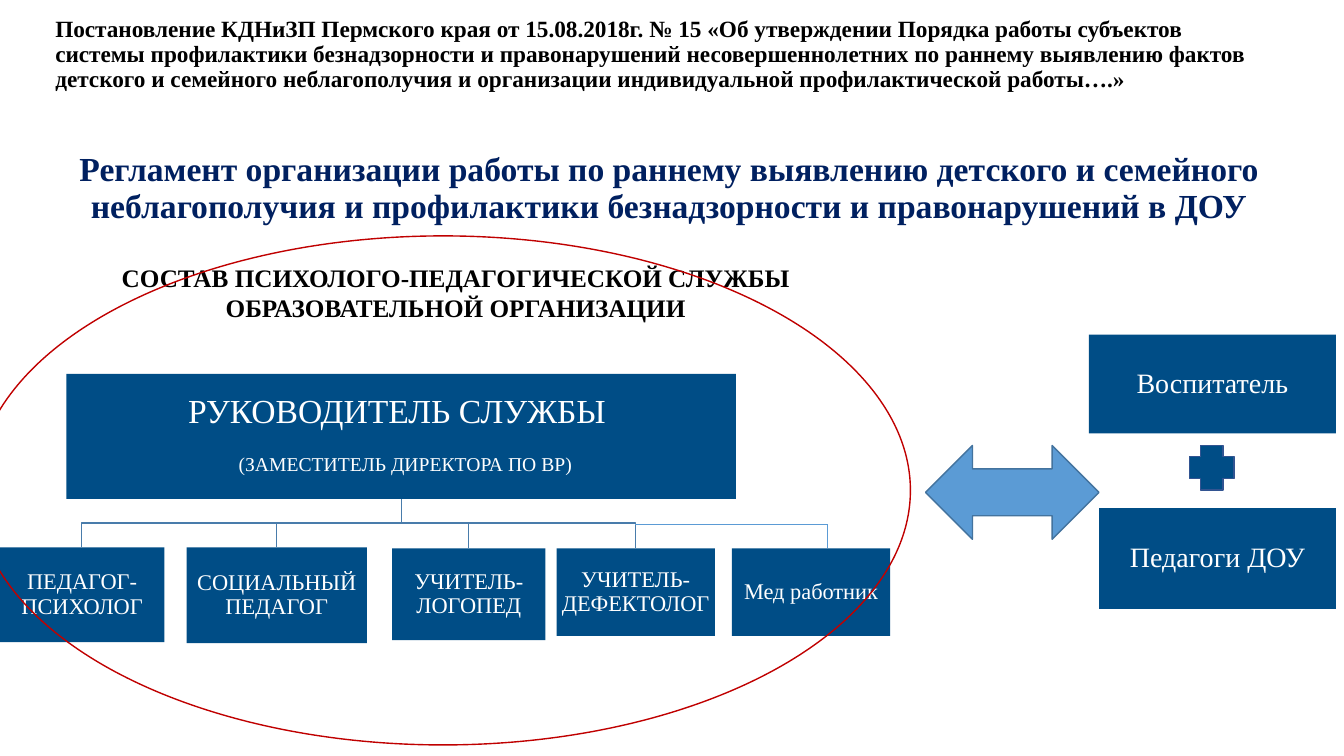
"""Slide on the psychological and pedagogical service of a kindergarten."""
from dataclasses import dataclass

from lxml.etree import SubElement
from pptx import Presentation
from pptx.dml.color import RGBColor
from pptx.enum.shapes import MSO_CONNECTOR, MSO_SHAPE as Shp
from pptx.enum.text import MSO_ANCHOR as Anchor, MSO_AUTO_SIZE as AutoSize, PP_ALIGN as Align
from pptx.oxml.ns import qn
from pptx.util import Emu, Pt

FONT = "Times New Roman"
NAVY, WHITE, BLACK, TITLE = "004D86", "FFFFFF", "000000", "002060"
TREE_LINE, BLUE, RED = "497CAB", "5B9BD5", "C00000"


@dataclass
class Run:
    text: str
    size: float
    color: str = WHITE
    bold: bool = False


@dataclass
class Box:
    left: int
    top: int
    width: int
    height: int
    paragraphs: list[list[Run]]
    inset: int = 1

    @property
    def center(self) -> int:
        return self.left + self.width // 2

    @property
    def bottom(self) -> int:
        return self.top + self.height


HEAD = Box(66, 371, 664, 124, [
    [Run("РУКОВОДИТЕЛЬ СЛУЖБЫ ", 24)],
    [Run(" ", 24), Run("(ЗАМЕСТИТЕЛЬ ДИРЕКТОРА ПО ВР)", 14)],
], 2)
STAFF = [
    Box(0, 543, 163, 94, [[Run("ПЕДАГОГ-ПСИХОЛОГ", 16)]]),
    Box(185, 543, 179, 95, [[Run("СОЦИАЛЬНЫЙ ПЕДАГОГ", 16)]]),
    Box(389, 544, 152, 91, [[Run("УЧИТЕЛЬ-ЛОГОПЕД", 16)]]),
    Box(552, 544, 157, 87, [[Run("УЧИТЕЛЬ-ДЕФЕКТОЛОГ", 16)]]),
]
MEDIC = Box(726, 544, 157, 87, [[Run("Мед работник", 16)]])
TEACHERS = [
    Box(1080, 332, 245, 98, [[Run("Воспитатель", 20)]]),
    Box(1090, 504, 235, 100, [[Run("Педагоги ДОУ", 20)]]),
]


def px(n: int) -> Emu:
    return Emu(n * 9144)


def rgb(color: str) -> RGBColor:
    return RGBColor.from_string(color)


def write(tf, paragraphs: list[list[Run]], align=Align.CENTER, anchor=Anchor.MIDDLE,
          spacing: float = 0.9, after: float = 0.0) -> None:
    tf.word_wrap = True
    tf.auto_size = AutoSize.NONE
    tf.vertical_anchor = anchor
    for i, runs in enumerate(paragraphs):
        p = tf.add_paragraph() if i else tf.paragraphs[0]
        p.alignment = align
        p.line_spacing = spacing
        p.space_before = Pt(0)
        p.space_after = Pt(after * runs[0].size)
        for run in runs:
            r = p.add_run()
            r.text = run.text
            r.font.name = FONT
            r.font.size = Pt(run.size)
            r.font.bold = run.bold
            r.font.color.rgb = rgb(run.color)


def style(sp, fill: str | None, line: str | None) -> None:
    sp.shadow.inherit = False
    if fill:
        sp.fill.solid()
        sp.fill.fore_color.rgb = rgb(fill)
    else:
        sp.fill.background()
    if line:
        sp.line.color.rgb = rgb(line)
        sp.line.width = Pt(1)
    else:
        sp.line.fill.background()


def add_preset(s, kind, left: int, top: int, width: int, height: int,
               fill: str | None, line: str | None = None):
    sp = s.shapes.add_shape(kind, px(left), px(top), px(width), px(height))
    style(sp, fill, line)
    return sp


def add_box(s, box: Box) -> None:
    sp = add_preset(s, Shp.RECTANGLE, box.left, box.top, box.width, box.height, NAVY)
    tf = sp.text_frame
    tf.margin_left = tf.margin_right = tf.margin_top = tf.margin_bottom = px(box.inset)
    write(tf, box.paragraphs, after=0.35)


def add_branch(s, head: Box, member: Box) -> None:
    middle = (head.bottom + member.top) // 2
    builder = s.shapes.build_freeform(head.center, head.bottom, scale=float(px(1)))
    builder.add_line_segments(
        [(head.center, middle), (member.center, middle), (member.center, member.top)],
        close=False)
    style(builder.convert_to_shape(), None, TREE_LINE)


def add_line(s, x1: int, y1: int, x2: int, y2: int) -> None:
    line = s.shapes.add_connector(MSO_CONNECTOR.STRAIGHT, px(x1), px(y1), px(x2), px(y2))
    line.line.color.rgb = rgb(BLUE)
    line.line.width = Pt(0.5)
    SubElement(line._element.spPr, qn("a:effectLst"))


def add_text(s, left: int, top: int, width: int, height: int, run: Run,
             align, spacing: float) -> None:
    tb = s.shapes.add_textbox(px(left), px(top), px(width), px(height))
    write(tb.text_frame, [[run]], align, Anchor.TOP, spacing)


def main() -> None:
    prs = Presentation()
    prs.slide_width, prs.slide_height = px(1333), px(750)
    s = prs.slides.add_slide(prs.slide_layouts[5])

    title = s.shapes.title
    title.left, title.top, title.width, title.height = px(45), px(141), px(1237), px(93)
    write(title.text_frame, [[Run(
        "Регламент организации работы по раннему выявлению детского и семейного "
        "неблагополучия и профилактики безнадзорности и правонарушений в ДОУ",
        24, TITLE, True)]])
    add_text(s, 45, 12, 1202, 121, Run(
        "Постановление КДНиЗП Пермского края от 15.08.2018г. № 15 «Об утверждении "
        "Порядка работы субъектов системы профилактики безнадзорности и правонарушений "
        "несовершеннолетних по раннему выявлению фактов детского и семейного "
        "неблагополучия и организации индивидуальной профилактической работы….»",
        16.6, BLACK, True), Align.LEFT, 0.9)

    for member in STAFF:
        add_branch(s, HEAD, member)
    for box in [HEAD, *STAFF, MEDIC]:
        add_box(s, box)
    add_text(s, 56, 255, 792, 71, Run(
        "СОСТАВ ПСИХОЛОГО-ПЕДАГОГИЧЕСКОЙ СЛУЖБЫ ОБРАЗОВАТЕЛЬНОЙ ОРГАНИЗАЦИИ",
        18, BLACK, True), Align.CENTER, 1.0)

    add_preset(s, Shp.OVAL, -24, 234, 927, 505, None, RED)
    add_preset(s, Shp.LEFT_RIGHT_ARROW, 918, 442, 172, 93, BLUE, "43739E")
    for box in TEACHERS:
        add_box(s, box)
    add_preset(s, Shp.CROSS, 1180, 442, 44, 44, NAVY, "325491")
    add_line(s, STAFF[-1].center, 520, 821, 520)
    add_line(s, 821, 520, 821, MEDIC.top)

    prs.save("out.pptx")


if __name__ == "__main__":
    main()
